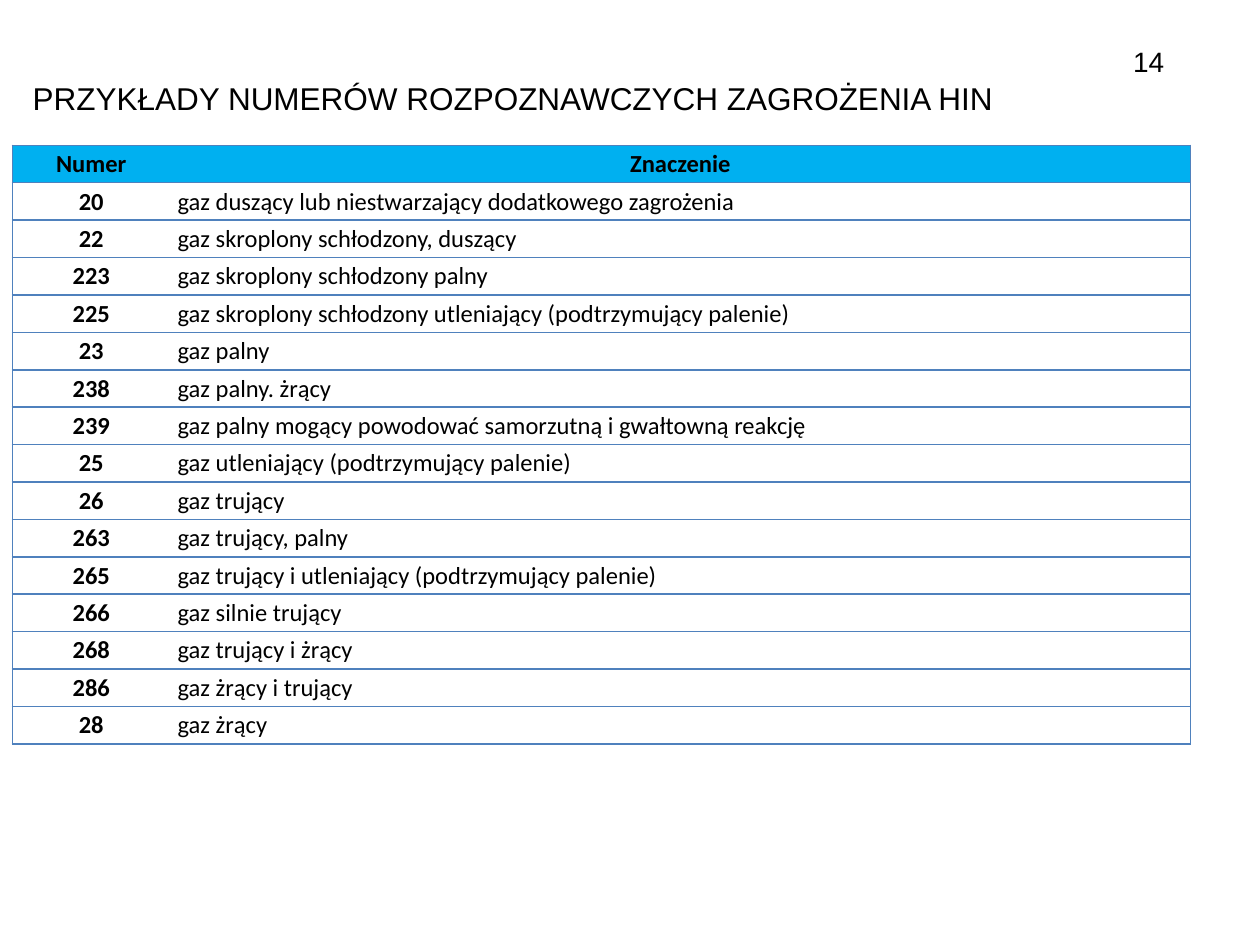
from typing import NamedTuple

from lxml import etree
from pptx import Presentation
from pptx.dml.color import RGBColor
from pptx.enum.text import MSO_ANCHOR, PP_ALIGN
from pptx.oxml.ns import qn
from pptx.util import Cm, Pt

LEFT, CENTER, RIGHT = PP_ALIGN.LEFT, PP_ALIGN.CENTER, PP_ALIGN.RIGHT
TOP, MIDDLE = MSO_ANCHOR.TOP, MSO_ANCHOR.MIDDLE

BLACK, WHITE, HEADER_BLUE, RULE_BLUE = "000000", "FFFFFF", "00B0F0", "4F81BD"
COLUMN_WIDTHS = (3.18, 20.57)
ROW_HEIGHT = 0.75


class Hazard(NamedTuple):
    number: str
    meaning: str


class Label(NamedTuple):
    text: str
    left: float
    top: float
    width: float
    height: float
    size: int
    align: int
    anchor: int


LABELS = (
    Label("PRZYKŁADY NUMERÓW ROZPOZNAWCZYCH ZAGROŻENIA HIN",
          0.41, 1.47, 20.62, 1.85, 18, LEFT, TOP),
    Label("14", 17.78, 0.58, 5.94, 1.32, 16, RIGHT, MIDDLE),
)

HEADER = Hazard("Numer", "Znaczenie")
HAZARDS = (
    Hazard("20", "gaz duszący lub niestwarzający dodatkowego zagrożenia"),
    Hazard("22", "gaz skroplony schłodzony, duszący"),
    Hazard("223", "gaz skroplony schłodzony palny"),
    Hazard("225", "gaz skroplony schłodzony utleniający (podtrzymujący palenie)"),
    Hazard("23", "gaz palny"),
    Hazard("238", "gaz palny. żrący"),
    Hazard("239", "gaz palny mogący powodować samorzutną i gwałtowną reakcję"),
    Hazard("25", "gaz utleniający (podtrzymujący palenie)"),
    Hazard("26", "gaz trujący"),
    Hazard("263", "gaz trujący, palny"),
    Hazard("265", "gaz trujący i utleniający (podtrzymujący palenie)"),
    Hazard("266", "gaz silnie trujący"),
    Hazard("268", "gaz trujący i żrący"),
    Hazard("286", "gaz żrący i trujący"),
    Hazard("28", "gaz żrący"),
)


def color(value: str) -> RGBColor:
    return RGBColor.from_string(value)


def style_paragraph(paragraph, font_name: str, size: int, align: int,
                    bold: bool = False) -> None:
    paragraph.alignment = align
    font = paragraph.font
    font.name, font.size, font.bold = font_name, Pt(size), bold
    font.color.rgb = color(BLACK)


def add_label(slide, label: Label) -> None:
    box = slide.shapes.add_textbox(Cm(label.left), Cm(label.top),
                                   Cm(label.width), Cm(label.height))
    frame = box.text_frame
    frame.word_wrap = True
    frame.vertical_anchor = label.anchor
    frame.text = label.text
    style_paragraph(frame.paragraphs[0], "Arial", label.size, label.align)


def set_borders(cell, hidden_side: str) -> None:
    """Rule every side of the cell except the one between the columns."""
    properties = cell._tc.get_or_add_tcPr()
    for side in "LRTB":
        line = etree.SubElement(properties, qn(f"a:ln{side}"), w=str(Pt(1)))
        if side == hidden_side:
            etree.SubElement(line, qn("a:noFill"))
        else:
            fill = etree.SubElement(line, qn("a:solidFill"))
            etree.SubElement(fill, qn("a:srgbClr"), val=RULE_BLUE)


def fill_cell(cell, text: str, fill: str, align: int, bold: bool,
              hidden_side: str) -> None:
    set_borders(cell, hidden_side)
    cell.fill.solid()
    cell.fill.fore_color.rgb = color(fill)
    cell.vertical_anchor = MIDDLE
    cell.margin_left = cell.margin_right = Cm(0.15)
    cell.margin_top = cell.margin_bottom = Cm(0.08)
    cell.text = text
    style_paragraph(cell.text_frame.paragraphs[0], "Calibri", 14, align, bold)


def add_hazard_table(slide) -> None:
    rows = (HEADER, *HAZARDS)
    table = slide.shapes.add_table(
        len(rows), len(COLUMN_WIDTHS), Cm(0.25), Cm(2.93),
        Cm(sum(COLUMN_WIDTHS)), Cm(ROW_HEIGHT * len(rows))).table
    for column, width in zip(table.columns, COLUMN_WIDTHS):
        column.width = Cm(width)
    for index, hazard in enumerate(rows):
        is_header = index == 0
        fill = HEADER_BLUE if is_header else WHITE
        table.rows[index].height = Cm(ROW_HEIGHT)
        fill_cell(table.cell(index, 0), hazard.number, fill, CENTER, True, "R")
        fill_cell(table.cell(index, 1), hazard.meaning, fill,
                  CENTER if is_header else LEFT, is_header, "L")


def main() -> None:
    presentation = Presentation()
    presentation.slide_width, presentation.slide_height = Cm(25.4), Cm(19.05)
    slide = presentation.slides.add_slide(presentation.slide_layouts[6])

    # Title and page number
    for label in LABELS:
        add_label(slide, label)

    # Hazard identification numbers
    add_hazard_table(slide)

    presentation.save("out.pptx")


if __name__ == "__main__":
    main()
